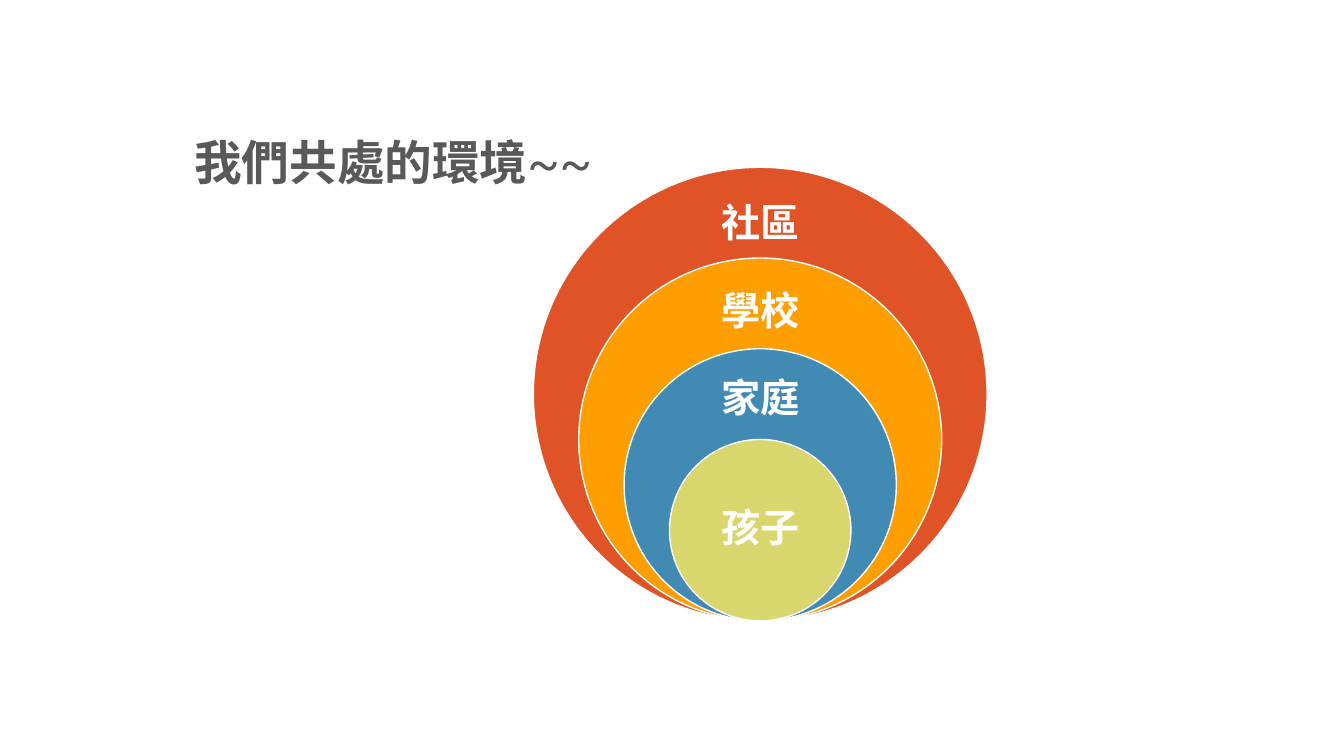
from dataclasses import dataclass

from pptx import Presentation, util as u
from pptx.dml.color import RGBColor
from pptx.enum import shapes, text

FONT = "Roboto"
CENTER_X, BOTTOM = 7.54, 6.16
OUTER_DIAMETER, DIAMETER_STEP = 4.5, 0.9
LABEL_WIDTH = 1.26


@dataclass
class Ring:
    name: str
    fill: str
    label_top: float
    label_height: float


RINGS = [
    Ring("社區", "DF5327", 1.89, 0.68),
    Ring("學校", "FE9E00", 2.78, 0.65),
    Ring("家庭", "418AB3", 3.66, 0.61),
    Ring("孩子", "D9D66D", 4.81, 0.9),
]


def color(value: str) -> RGBColor:
    return RGBColor.from_string(value)


def add_text(page, area: tuple, spans: list, size: float, ink: str,
             frame_format: dict, para_format: dict) -> None:
    """Add a text box holding one paragraph of (wording, bold) spans."""
    box = page.shapes.add_textbox(*map(u.Inches, area))
    frame = box.text_frame
    para = frame.paragraphs[0]
    for target, values in ((frame, frame_format), (para, para_format)):
        for name, value in values.items():
            setattr(target, name, value)
    for wording, bold in spans:
        span = para.add_run()
        span.text = wording
        for name, value in {"name": FONT, "size": u.Pt(size), "bold": bold}.items():
            setattr(span.font, name, value)
        span.font.color.rgb = color(ink)


def add_ring(page, ring: Ring, diameter: float) -> None:
    """Add a circle resting on the common bottom point, with its label."""
    area = (CENTER_X - diameter / 2, BOTTOM - diameter, diameter, diameter)
    circle = page.shapes.add_shape(shapes.MSO_SHAPE.OVAL, *map(u.Inches, area))
    circle.shadow.inherit = False
    circle.fill.solid()
    circle.fill.fore_color.rgb = color(ring.fill)
    circle.line.color.rgb = color("FFFFFF")
    circle.line.width = u.Pt(1)

    margins = {f"margin_{side}": u.Inches(0.22)
               for side in ("left", "top", "right", "bottom")}
    add_text(
        page,
        (CENTER_X - LABEL_WIDTH / 2, ring.label_top, LABEL_WIDTH, ring.label_height),
        [(ring.name, True)], 28, "FFFFFF",
        {"word_wrap": True, "vertical_anchor": text.MSO_ANCHOR.MIDDLE, **margins},
        {"alignment": text.PP_ALIGN.CENTER, "line_spacing": 0.9,
         "space_after": u.Pt(10)},
    )


def main() -> None:
    deck = Presentation()
    deck.slide_width, deck.slide_height = u.Inches(13.33), u.Inches(7.5)
    page = deck.slides.add_slide(deck.slide_layouts[6])

    # Title
    add_text(
        page, (1.83, 0.53, 10.25, 1.41),
        [("我們共處的環境", True), ("~~", False)], 34, "595959",
        {"word_wrap": True, "vertical_anchor": text.MSO_ANCHOR.BOTTOM},
        {"line_spacing": 0.9},
    )

    # Nested circles, outermost first
    for index, ring in enumerate(RINGS):
        add_ring(page, ring, OUTER_DIAMETER - index * DIAMETER_STEP)

    deck.save("out.pptx")


if __name__ == "__main__":
    main()
